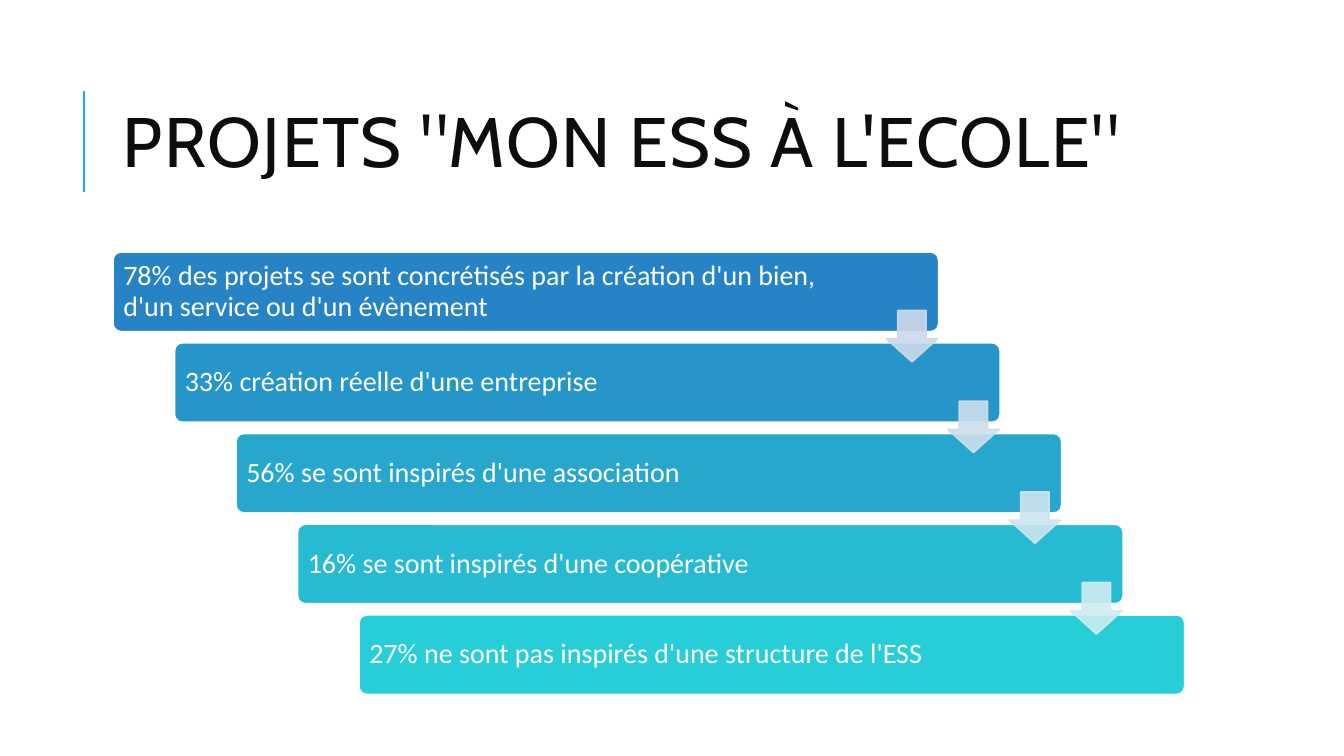
"""Build a slide with a staircase of five project results linked by arrows."""
from lxml import etree
from pptx import Presentation
from pptx.dml.color import RGBColor
from pptx.enum.shapes import MSO_CONNECTOR, MSO_SHAPE
from pptx.enum.text import MSO_ANCHOR, PP_ALIGN
from pptx.oxml.ns import qn
from pptx.util import Inches, Pt

LINE = MSO_CONNECTOR.STRAIGHT
BAR, ARROW = MSO_SHAPE.ROUNDED_RECTANGLE, MSO_SHAPE.DOWN_ARROW
MIDDLE, LEFT = MSO_ANCHOR.MIDDLE, PP_ALIGN.LEFT
WHITE = RGBColor(0xFF, 0xFF, 0xFF)
INK = RGBColor(0x0D, 0x0D, 0x0D)
ACCENT = RGBColor(0x1C, 0xAD, 0xE4)
BAR_COLORS = [RGBColor(0x26, 0x83, 0xC6), RGBColor(0x26, 0x95, 0xCA),
              RGBColor(0x27, 0xA7, 0xCE), RGBColor(0x27, 0xBA, 0xD3),
              RGBColor(0x27, 0xCE, 0xD7)]
ARROW_COLORS = [RGBColor(0xCD, 0xD9, 0xEA), RGBColor(0xCD, 0xDF, 0xEC),
                RGBColor(0xCD, 0xE5, 0xEE), RGBColor(0xCD, 0xED, 0xF0)]
RESULTS = [
    "78% des projets se sont concrétisés par la création d'un bien, "
    "d'un service ou d'un évènement",
    "33% création réelle d'une entreprise",
    "56% se sont inspirés d'une association",
    "16% se sont inspirés d'une coopérative",
    "27% ne sont pas inspirés d'une structure de l'ESS",
]
STEP_X, STEP_Y = 0.61, 0.9
BAR_X, BAR_Y, BAR_W, BAR_H = 1.12, 2.5, 8.19, 0.79
ARROW_X, ARROW_Y, ARROW_SIZE = 8.79, 3.08, 0.51


def add_step(kind, x, y, w, h, adjustments, fill, line):
    sp = s.shapes.add_shape(kind, Inches(x), Inches(y), Inches(w), Inches(h))
    sp.shadow.inherit = False
    for i, value in enumerate(adjustments):
        sp.adjustments[i] = value
    sp.fill.solid()
    sp.fill.fore_color.rgb = fill
    sp.line.color.rgb = line
    sp.line.width = Pt(1.25)
    return sp


def write(tf, text, spacing, font):
    tf.word_wrap = True
    tf.vertical_anchor = MIDDLE
    p = tf.paragraphs[0]
    p.alignment = LEFT
    p.line_spacing = spacing
    r = p.add_run()
    r.text = text
    r.font.color.rgb = font.pop("color")
    for name, value in font.items():
        setattr(r.font, name, value)
    return r


prs = Presentation()
prs.slide_width, prs.slide_height = Inches(13.33), Inches(7.5)
s = prs.slides.add_slide(prs.slide_layouts[6])

rule = s.shapes.add_connector(LINE, Inches(0.83), Inches(1.9), Inches(0.83), Inches(0.9))
rule.line.color.rgb = ACCENT
rule.line.width = Pt(1.5)
etree.SubElement(rule._element.spPr, qn("a:effectLst"))

title = s.shapes.add_textbox(Inches(1.12), Inches(0.64), Inches(10.63), Inches(1.64))
r = write(title.text_frame, "PROJETS \"MON ESS À L'ECOLE\"", 0.8,
          {"name": "Cabin", "size": Pt(50), "color": INK})
r.font._element.set("spc", "100")

for i, (text, color) in enumerate(zip(RESULTS, BAR_COLORS)):
    sp = add_step(BAR, BAR_X + i * STEP_X, BAR_Y + i * STEP_Y, BAR_W, BAR_H,
                  [0.1], color, WHITE)
    tf = sp.text_frame
    for side, inset in {"left": 0.08, "top": 0.08, "right": 0.98, "bottom": 0.08}.items():
        setattr(tf, f"margin_{side}", Inches(inset))
    write(tf, text, 0.9, {"name": "Calibri", "size": Pt(20), "color": WHITE})

for i, color in enumerate(ARROW_COLORS):
    sp = add_step(ARROW, ARROW_X + i * STEP_X, ARROW_Y + i * STEP_Y, ARROW_SIZE, ARROW_SIZE,
                  [0.45, 0.55], color, color)
    for clr in sp._element.spPr.iter(qn("a:srgbClr")):
        etree.SubElement(clr, qn("a:alpha"), val="90000")
    sp.adjustments[0], sp.adjustments[1] = 0.55, 0.45

prs.save("out.pptx")
